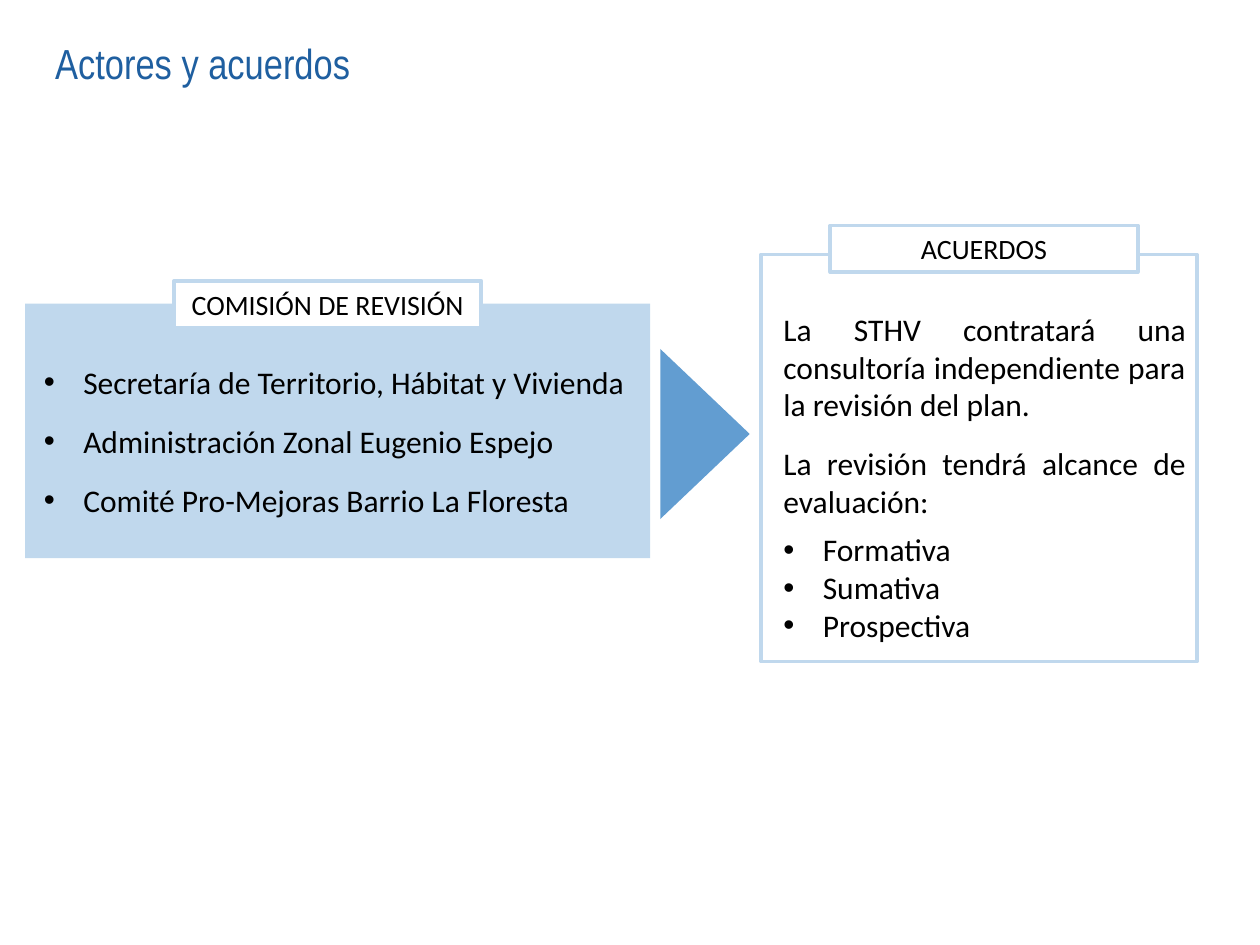
from lxml import etree
from pptx import Presentation
from pptx.dml.color import RGBColor
from pptx.enum.shapes import MSO_SHAPE
from pptx.enum.text import MSO_ANCHOR, MSO_AUTO_SIZE, PP_ALIGN
from pptx.oxml.ns import qn
from pptx.util import Pt

RECTANGLE = MSO_SHAPE.RECTANGLE
RIGHT_ARROW = MSO_SHAPE.RIGHT_ARROW
LEFT, CENTER, JUSTIFY = PP_ALIGN.LEFT, PP_ALIGN.CENTER, PP_ALIGN.JUSTIFY
MIDDLE = MSO_ANCHOR.MIDDLE
GROW = MSO_AUTO_SIZE.SHAPE_TO_FIT_TEXT

COLORS = {
    "title": "1F5FA0",
    "pale": "C0D8ED",
    "arrow": "629DD1",
    "white": "FFFFFF",
    "text": "000000",
}
BODY_FONT = "Calibri"
BULLET_INDENT = Pt(22.5)
LABEL_WIDTH, LABEL_HEIGHT = 175.7, 26.6

MEMBERS = [
    "Secretaría de Territorio, Hábitat y Vivienda",
    "Administración Zonal Eugenio Espejo",
    "Comité Pro-Mejoras Barrio La Floresta",
]
AGREEMENTS = [
    "La STHV contratará una consultoría independiente para la revisión del plan.",
    "La revisión tendrá alcance de evaluación:",
]
SCOPES = ["Formativa", "Sumativa", "Prospectiva"]


def color(name):
    return RGBColor.from_string(COLORS[name])


def add_block(slide, preset, box, fill=None, line=None, line_width=0):
    block = slide.shapes.add_shape(preset, *map(Pt, box))
    block.shadow.inherit = False
    if fill:
        block.fill.solid()
        block.fill.fore_color.rgb = color(fill)
    else:
        block.fill.background()
    if line:
        block.line.color.rgb = color(line)
        block.line.width = Pt(line_width)
    else:
        block.line.fill.background()
    return block


def add_text_area(slide, box):
    area = slide.shapes.add_textbox(*map(Pt, box))
    area.text_frame.word_wrap = True
    area.text_frame.auto_size = GROW
    return area.text_frame


def add_bullet(paragraph):
    properties = paragraph._p.get_or_add_pPr()
    properties.set("marL", str(BULLET_INDENT))
    properties.set("indent", str(-BULLET_INDENT))
    etree.SubElement(properties, qn("a:buFont")).set("typeface", "Arial")
    etree.SubElement(properties, qn("a:buChar")).set("char", "•")


def write_paragraph(frame, text, size, font=BODY_FONT, ink="text",
                    align=LEFT, gap=0, bullet=False):
    first = not frame.text
    paragraph = frame.paragraphs[0] if first else frame.add_paragraph()
    paragraph.text = text
    paragraph.alignment = align
    if gap:
        paragraph.space_before = Pt(0 if first else gap)
        paragraph.space_after = Pt(gap)
    if bullet:
        add_bullet(paragraph)
    for run in paragraph.runs:
        run.font.name = font
        run.font.size = Pt(size)
        run.font.color.rgb = color(ink)


def add_label(slide, left, top, text):
    label = add_block(slide, RECTANGLE, (left, top, LABEL_WIDTH, LABEL_HEIGHT),
                      "white", "pale", 2.25)
    label.text_frame.word_wrap = True
    label.text_frame.auto_size = GROW
    label.text_frame.vertical_anchor = MIDDLE
    write_paragraph(label.text_frame, text, 16, align=CENTER)


def main():
    deck = Presentation()
    deck.slide_width, deck.slide_height = Pt(720), Pt(540)
    slide = deck.slides.add_slide(deck.slide_layouts[6])

    add_block(slide, RECTANGLE, (434.9, 145.4, 249.1, 232.6),
              line="pale", line_width=2)
    add_block(slide, RECTANGLE, (14.4, 173.5, 357.1, 145.4), "pale")

    title = add_text_area(slide, (24.5, 18, 676, 36))
    write_paragraph(title, "Actores y acuerdos", 24, "Arial Narrow", "title")

    add_label(slide, 99.4, 160.6, "COMISIÓN DE REVISIÓN")
    commission = add_text_area(slide, (18, 203.8, 351.4, 97.2))
    for member in MEMBERS:
        write_paragraph(commission, member, 18, gap=6, bullet=True)

    agreements = add_text_area(slide, (440.6, 173.5, 244.1, 200.2))
    for agreement in AGREEMENTS:
        write_paragraph(agreements, agreement, 18, align=JUSTIFY, gap=6)
    for scope in SCOPES:
        write_paragraph(agreements, scope, 18, align=JUSTIFY, bullet=True)
    add_label(slide, 474.5, 128.9, "ACUERDOS")

    arrow = add_block(slide, RIGHT_ARROW, (377.3, 199.4, 51.1, 97.2), "arrow")
    arrow.adjustments[0] = 0.5
    arrow.adjustments[1] = 1

    deck.save("out.pptx")


if __name__ == "__main__":
    main()
